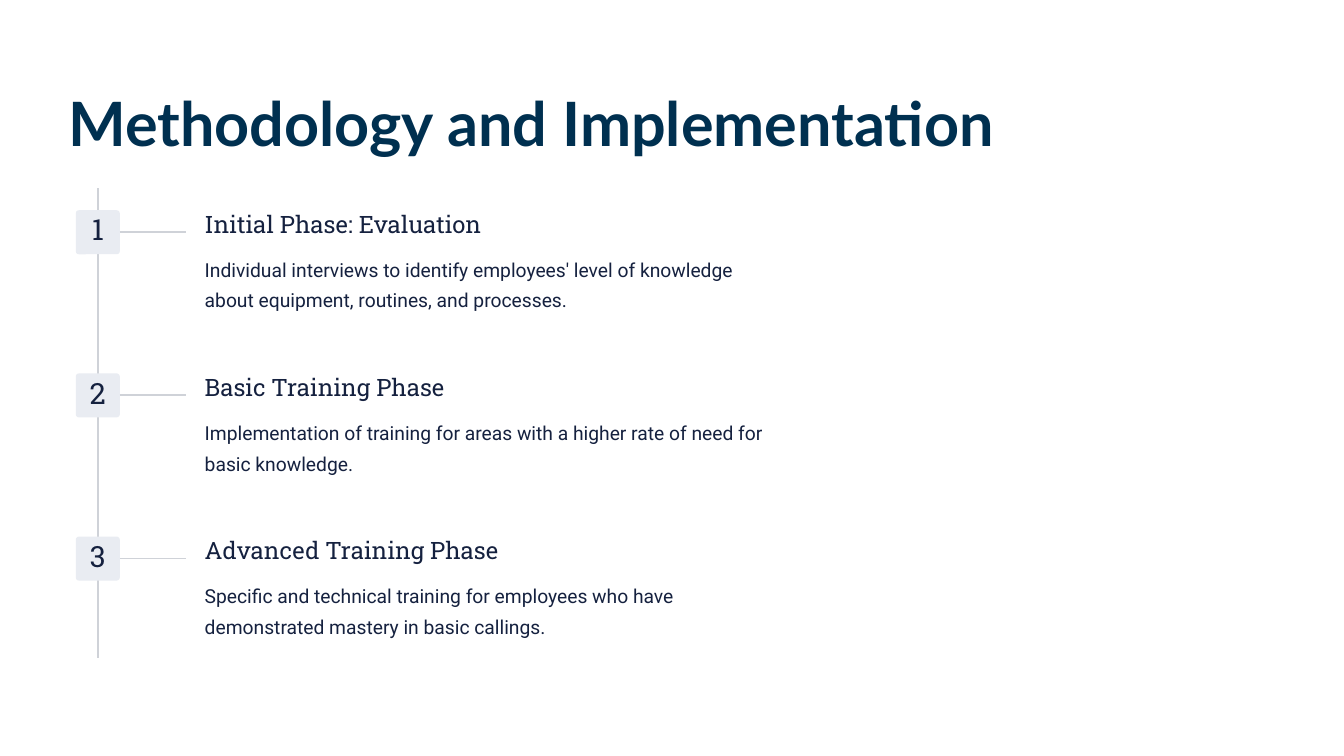
"""Build the Methodology and Implementation slide with a three-step vertical timeline."""
from dataclasses import dataclass

from lxml import etree
from pptx import Presentation
from pptx import util as u
from pptx.dml.color import RGBColor
from pptx.enum import shapes, text
from pptx.oxml import ns
from pptx.shapes.autoshape import Shape
from pptx.shapes.connector import Connector
from pptx.slide import Slide

SCALE = 9144
PAGE_WIDTH, PAGE_HEIGHT = 2199, 1237
SPINE_X, SPINE_TOP, SPINE_BOTTOM = 160, 308, 1077
BADGE_SIZE, FIRST_BADGE_TOP, STEP = 72, 344, 267
BRANCH_END, TEXT_LEFT, TEXT_WIDTH = 304, 335, 927


@dataclass(frozen=True)
class Style:
    font: str
    size: float
    leading: float
    color: RGBColor
    bold: bool = False
    align: text.PP_ALIGN = text.PP_ALIGN.LEFT
    anchor: text.MSO_ANCHOR = text.MSO_ANCHOR.TOP


@dataclass(frozen=True)
class Theme:
    line: RGBColor = RGBColor.from_string("CFD2D8")
    badge: RGBColor = RGBColor.from_string("E9ECF2")
    ink: RGBColor = RGBColor.from_string("15213F")
    line_width: float = 2.16
    title: Style = Style("Lato", 72, 71.5, RGBColor.from_string("003050"), bold=True)
    number: Style = Style("Roboto Slab", 34.4, 34.4, ink,
                          align=text.PP_ALIGN.CENTER, anchor=text.MSO_ANCHOR.MIDDLE)
    heading: Style = Style("Roboto Slab", 28.2, 35.7, ink)
    detail: Style = Style("Roboto", 22.7, 36.4, ink)


@dataclass(frozen=True)
class Phase:
    heading: str
    detail: str


THEME = Theme()
PHASES = [
    Phase("Initial Phase: Evaluation",
          "Individual interviews to identify employees' level of knowledge "
          "about equipment, routines, and processes."),
    Phase("Basic Training Phase",
          "Implementation of training for areas with a higher rate of need for basic knowledge."),
    Phase("Advanced Training Phase",
          "Specific and technical training for employees who have "
          "demonstrated mastery in basic callings."),
]


def px(length: int) -> u.Emu:
    """Turn px into EMU."""
    return u.Emu(length * SCALE)


def write(box: Shape, wording: str, style: Style) -> None:
    """Fill a shape with one formatted paragraph."""
    frame = box.text_frame
    frame.text = wording
    frame.word_wrap = True
    frame.auto_size = text.MSO_AUTO_SIZE.NONE
    frame.vertical_anchor = style.anchor
    frame.margin_left = frame.margin_top = frame.margin_right = frame.margin_bottom = 0
    para = frame.paragraphs[0]
    para.alignment = style.align
    para.line_spacing = u.Pt(style.leading)
    para.space_before = u.Pt(0)
    for span in para.runs:
        span.font.name = style.font
        span.font.size = u.Pt(style.size)
        span.font.bold = style.bold
        span.font.color.rgb = style.color


def add_text(page: Slide, top: int, height: int, wording: str, style: Style) -> None:
    """Place a text box in the timeline's text column."""
    box = page.shapes.add_textbox(px(TEXT_LEFT), px(top), px(TEXT_WIDTH), px(height))
    write(box, wording, style)


def add_line(page: Slide, left: int, top: int, right: int, bottom: int) -> Connector:
    """Draw a plain timeline line."""
    line = page.shapes.add_connector(
        shapes.MSO_CONNECTOR.STRAIGHT, px(left), px(top), px(right), px(bottom))
    line.line.color.rgb = THEME.line
    line.line.width = u.Pt(THEME.line_width)
    etree.SubElement(line._element.spPr, ns.qn("a:effectLst"))
    return line


def add_phase(page: Slide, number: int, phase: Phase) -> None:
    """Draw one numbered phase with its branch and wording."""
    top = FIRST_BADGE_TOP + (number - 1) * STEP
    left, middle = SPINE_X - BADGE_SIZE // 2, top + BADGE_SIZE // 2
    badge = page.shapes.add_shape(
        shapes.MSO_SHAPE.ROUNDED_RECTANGLE, px(left), px(top), px(BADGE_SIZE), px(BADGE_SIZE))
    badge.adjustments[0] = 0.07
    badge.shadow.inherit = False
    badge.fill.solid()
    badge.fill.fore_color.rgb = THEME.badge
    badge.line.fill.background()
    write(badge, str(number), THEME.number)
    branch = add_line(page, left + BADGE_SIZE, middle, BRANCH_END, middle)
    branch.begin_connect(badge, 3)
    add_text(page, top - 4, 50, phase.heading, THEME.heading)
    add_text(page, top + 65, 102, phase.detail, THEME.detail)


def main() -> None:
    """Build and save the deck."""
    deck = Presentation()
    deck.slide_width, deck.slide_height = px(PAGE_WIDTH), px(PAGE_HEIGHT)
    page = deck.slides.add_slide(deck.slide_layouts.get_by_name("Title Only"))
    title = page.shapes.title
    title.left, title.top, title.width, title.height = px(112), px(160), px(1700), px(100)
    write(title, "Methodology and Implementation", THEME.title)
    add_line(page, SPINE_X, SPINE_TOP, SPINE_X, SPINE_BOTTOM)
    for number, phase in enumerate(PHASES, start=1):
        add_phase(page, number, phase)
    deck.save("out.pptx")


if __name__ == "__main__":
    main()
